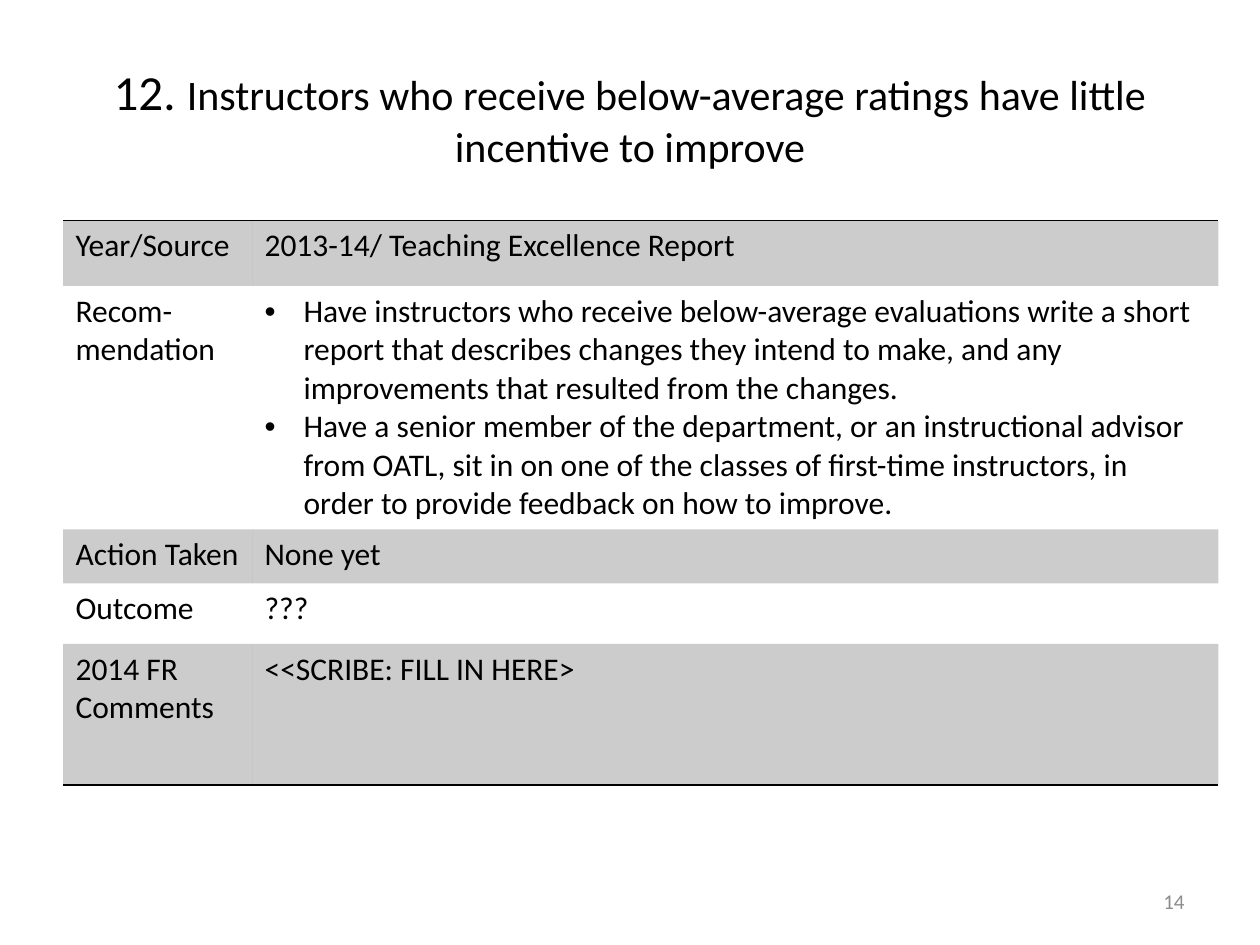
from lxml import etree
from pptx import Presentation
from pptx import util as u
from pptx.dml.color import RGBColor
from pptx.enum import text
from pptx.oxml import parse_xml
from pptx.oxml.ns import nsdecls, qn

COLORS = {"ink": "000000", "page_number": "8C8C8C"}
FONT = "Calibri"
BAND_OPACITY = 20  # percent
NO_STYLE = "{2D5ABB26-0587-4C30-8999-92F81FD0307C}"
INDENT = u.Inches(0.31)

HEADING = [("12. ", 28),
           ("Instructors who receive below-average ratings have little "
            "incentive to improve", 24)]
# label lines, content paragraphs, row height in inches
REVIEW_ROWS = [
    (["Year/Source"], ["2013-14/ Teaching Excellence Report"], 0.52),
    (["Recom-", "mendation"],
     ["Have instructors who receive below-average evaluations write a short "
      "report that describes changes they intend to make, and any "
      "improvements that resulted from the changes.",
      "Have a senior member of the department, or an instructional advisor "
      "from OATL, sit in on one of the classes of first-time instructors, in "
      "order to provide feedback on how to improve."], 1.93),
    (["Action Taken"], ["None yet"], 0.43),
    (["Outcome"], ["???"], 0.48),
    (["2014 FR Comments"], ["<<SCRIBE: FILL IN HERE>"], 1.12),
]
LABEL_SHARE = 1.5 / 9.17


def style_run(run, size, color="ink"):
    run.font.name = FONT
    run.font.size = u.Pt(size)
    run.font.color.rgb = RGBColor.from_string(COLORS[color])


def add_bullet(paragraph):
    props = paragraph._p.get_or_add_pPr()
    props.set("marL", str(INDENT))
    props.set("indent", str(-INDENT))
    etree.SubElement(props, qn("a:buFont")).set("typeface", "Arial")
    etree.SubElement(props, qn("a:buChar")).set("char", "•")


def shade(cell):
    cell.fill.solid()
    cell.fill.fore_color.rgb = RGBColor.from_string(COLORS["ink"])
    ink = cell._tc.tcPr.find(".//" + qn("a:srgbClr"))
    etree.SubElement(ink, qn("a:alpha")).set("val", str(BAND_OPACITY * 1000))


def rule(cell, side):
    # Borders come before the fill in the cell properties
    cell._tc.get_or_add_tcPr().insert(0, parse_xml(
        f'<a:{side} {nsdecls("a")} w="{u.Pt(1)}"><a:solidFill>'
        f'<a:srgbClr val="{COLORS["ink"]}"/></a:solidFill></a:{side}>'))


def fill_cell(cell, lines):
    cell.text_frame.text = "\n".join(lines)
    for paragraph in cell.text_frame.paragraphs:
        for run in paragraph.runs:
            style_run(run, 18)


def place_title(slide, left, top, width, height):
    title = slide.shapes.title
    title.left, title.top, title.width, title.height = left, top, width, height
    frame = title.text_frame
    frame.auto_size = text.MSO_AUTO_SIZE.NONE
    frame.vertical_anchor = text.MSO_ANCHOR.MIDDLE
    paragraph = frame.paragraphs[0]
    paragraph.alignment = text.PP_ALIGN.CENTER
    for words, size in HEADING:
        run = paragraph.add_run()
        run.text = words
        style_run(run, size)


def place_review_table(slide, left, top, width, height):
    table = slide.shapes.add_table(len(REVIEW_ROWS), 2, left, top,
                                   width, height).table
    table.first_row = table.horz_banding = False
    table._tbl.tblPr.find(qn("a:tableStyleId")).text = NO_STYLE
    table.columns[0].width = int(width * LABEL_SHARE)
    table.columns[1].width = width - table.columns[0].width

    for index, (label, content, row_height) in enumerate(REVIEW_ROWS):
        table.rows[index].height = u.Inches(row_height)
        for cell, lines in zip(table.rows[index].cells, (label, content)):
            fill_cell(cell, lines)
            if index % 2 == 0:
                shade(cell)
            else:
                cell.fill.background()
        if len(content) > 1:
            for paragraph in table.cell(index, 1).text_frame.paragraphs:
                add_bullet(paragraph)

    # Rules above the first row and below the last
    for row, side in ((0, "lnT"), (len(REVIEW_ROWS) - 1, "lnB")):
        for cell in table.rows[row].cells:
            rule(cell, side)


def place_page_number(slide, left, top, width, height):
    frame = slide.shapes.add_textbox(left, top, width, height).text_frame
    frame.word_wrap = True
    frame.vertical_anchor = text.MSO_ANCHOR.MIDDLE
    frame.text = "14"
    paragraph = frame.paragraphs[0]
    paragraph.alignment = text.PP_ALIGN.RIGHT
    style_run(paragraph.runs[0], 12, "page_number")


def main():
    deck = Presentation()
    deck.slide_width, deck.slide_height = u.Inches(10), u.Inches(7.5)
    slide = deck.slides.add_slide(deck.slide_layouts[5])
    margin = u.Inches(0.5)
    content_width = deck.slide_width - 2 * margin
    table_height = u.Inches(sum(row[2] for row in REVIEW_ROWS))
    number_width = u.Inches(2.33)

    place_title(slide, margin, u.Inches(0.3), content_width, u.Inches(1.25))
    place_review_table(slide, margin, u.Inches(1.75), u.Inches(9.17),
                       table_height)
    place_page_number(slide, deck.slide_width - margin - number_width,
                      u.Inches(6.95), number_width, u.Inches(0.4))
    deck.save("out.pptx")


if __name__ == "__main__":
    main()
